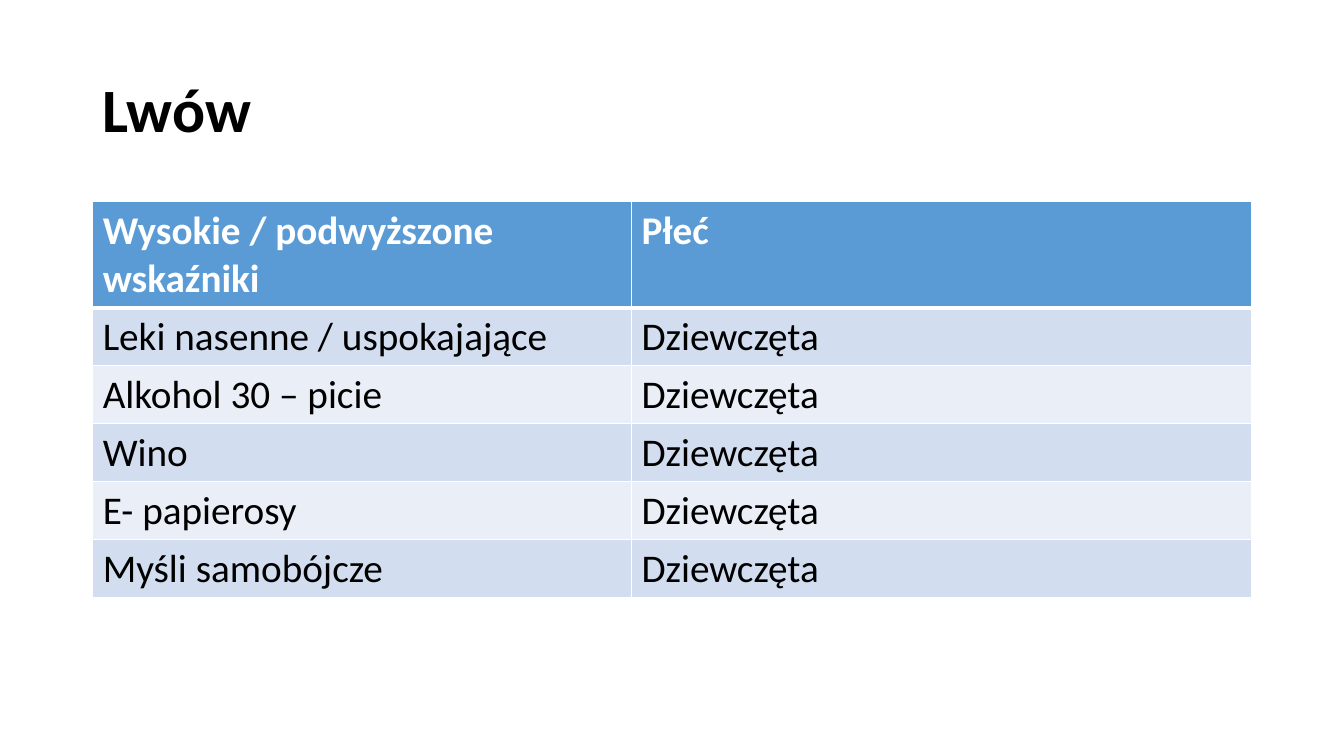
"""Builds the Lwów slide: a title above a table of raised indicators by sex."""
from dataclasses import dataclass

from lxml.etree import SubElement
from pptx import Presentation
from pptx.dml.color import RGBColor
from pptx.enum.text import MSO_ANCHOR, PP_ALIGN
from pptx.oxml.ns import qn
from pptx.slide import Slide
from pptx.table import _Cell as Cell
from pptx.text.text import TextFrame
from pptx.util import Inches, Pt

COLOURS = {
    "text": "000000",
    "header_text": "FFFFFF",
    "rule": "FFFFFF",
    "header": "5B9BD5",
    "odd_band": "D2DEEF",
    "even_band": "EAEFF7",
}
FONT = "Calibri"
SLIDE_WIDTH, SLIDE_HEIGHT = Inches(13.33), Inches(7.5)
MARGIN = int(SLIDE_WIDTH * 0.069)
CONTENT_WIDTH = SLIDE_WIDTH - 2 * MARGIN
TITLE_TOP, TITLE_HEIGHT = int(SLIDE_HEIGHT * 0.053), int(SLIDE_HEIGHT * 0.193)
TABLE_TOP = int(SLIDE_HEIGHT * 0.267)
HEADER_HEIGHT, ROW_HEIGHT = Inches(1.04), Inches(0.57)
INDICATOR_SHARE = 0.465
THIN, THICK = 1, 3


@dataclass(frozen=True)
class Finding:
    indicator: str
    sex: str


@dataclass(frozen=True)
class RowStyle:
    fill: str
    text: str
    bold: bool
    top_rule: int
    bottom_rule: int


HEADINGS = Finding("Wysokie / podwyższone wskaźniki", "Płeć")
FINDINGS = [
    Finding(indicator, "Dziewczęta")
    for indicator in (
        "Leki nasenne / uspokajające",
        "Alkohol 30 – picie",
        "Wino",
        "E- papierosy",
        "Myśli samobójcze",
    )
]


def row_style(row: int) -> RowStyle:
    if row == 0:
        return RowStyle("header", "header_text", True, THIN, THICK)
    band = "odd_band" if row % 2 else "even_band"
    return RowStyle(band, "text", False, THICK if row == 1 else THIN, THIN)


def write(frame: TextFrame, text: str, size: int, colour: str, bold: bool) -> None:
    frame.text = text
    font = frame.paragraphs[0].runs[0].font
    font.name, font.size, font.bold = FONT, Pt(size), bold
    font.color.rgb = RGBColor.from_string(COLOURS[colour])


def rule_cell(cell: Cell, style: RowStyle) -> None:
    properties = cell._tc.get_or_add_tcPr()
    widths = {"L": THIN, "R": THIN, "T": style.top_rule, "B": style.bottom_rule}
    for side, width in widths.items():
        rule = SubElement(properties, qn(f"a:ln{side}"), w=str(Pt(width)))
        paint = SubElement(rule, qn("a:solidFill"))
        SubElement(paint, qn("a:srgbClr"), val=COLOURS["rule"])


def add_title(slide: Slide, text: str) -> None:
    title = slide.shapes.title
    title.left, title.top = MARGIN, TITLE_TOP
    title.width, title.height = CONTENT_WIDTH, TITLE_HEIGHT
    write(title.text_frame, text, 44, "text", True)
    title.text_frame.vertical_anchor = MSO_ANCHOR.MIDDLE
    title.text_frame.paragraphs[0].alignment = PP_ALIGN.LEFT
    title.text_frame.paragraphs[0].line_spacing = 0.9


def add_findings(slide: Slide, entries: list[Finding]) -> None:
    height = HEADER_HEIGHT + ROW_HEIGHT * (len(entries) - 1)
    findings = slide.shapes.add_table(
        len(entries), 2, MARGIN, TABLE_TOP, CONTENT_WIDTH, height
    ).table
    indicator_width = int(CONTENT_WIDTH * INDICATOR_SHARE)
    findings.columns[0].width = indicator_width
    findings.columns[1].width = CONTENT_WIDTH - indicator_width
    for row, entry in enumerate(entries):
        findings.rows[row].height = ROW_HEIGHT if row else HEADER_HEIGHT
        style = row_style(row)
        for column, text in enumerate((entry.indicator, entry.sex)):
            cell = findings.cell(row, column)
            write(cell.text_frame, text, 28, style.text, style.bold)
            rule_cell(cell, style)
            cell.fill.solid()
            cell.fill.fore_color.rgb = RGBColor.from_string(COLOURS[style.fill])


def main() -> None:
    deck = Presentation()
    deck.slide_width, deck.slide_height = SLIDE_WIDTH, SLIDE_HEIGHT
    slide = deck.slides.add_slide(deck.slide_layouts[5])
    add_title(slide, "Lwów")
    add_findings(slide, [HEADINGS, *FINDINGS])
    deck.save("out.pptx")


if __name__ == "__main__":
    main()
